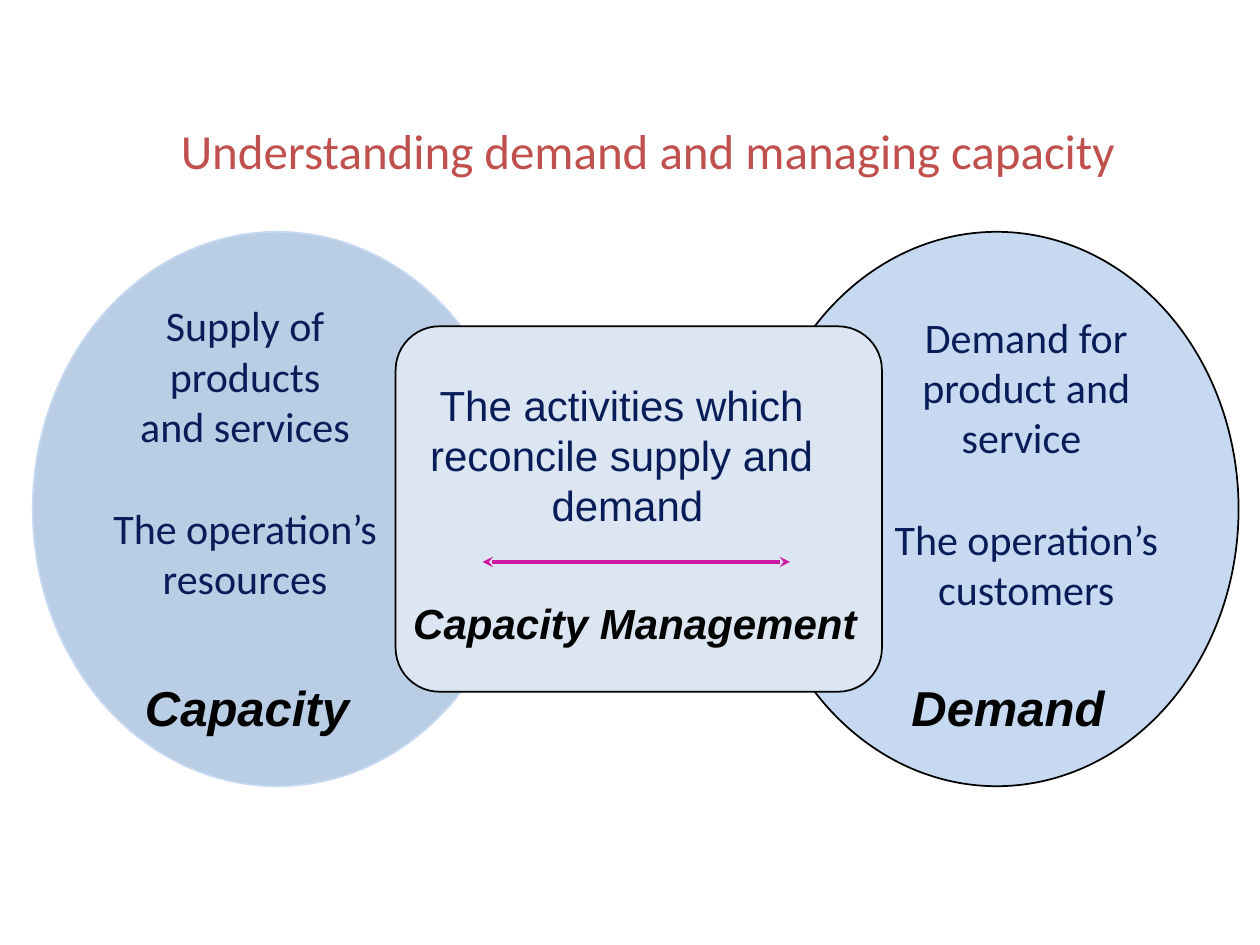
from dataclasses import dataclass

from lxml import etree
from pptx import Presentation
from pptx.dml.color import RGBColor
from pptx.enum import shapes, text
from pptx.oxml import ns
from pptx.util import Inches, Pt

NAVY, BLACK, RED, MAGENTA = "081D58", "000000", "C0504D", "CE1AA0"
PALE_BLUE = "C6D9F1"
BLANK_LINE = 29.3  # height in points of one 24 point Calibri line


@dataclass
class Panel:
    kind: shapes.MSO_SHAPE
    box: tuple[float, float, float, float]
    fill: str
    line: str


@dataclass
class Label:
    box: tuple[float, float, float, float]
    paragraphs: list[str]
    font: dict
    color: str
    gap_before_last: float = 0


BODY = {"name": "Calibri", "size": Pt(24)}
CENTER = {"name": "Arial", "size": Pt(24)}
HEADING = {"name": "Arial", "size": Pt(28), "bold": True, "italic": True}

PANELS = [
    Panel(shapes.MSO_SHAPE.OVAL, (0.26, 1.84, 3.88, 4.4), "B9CDE5", PALE_BLUE),
    Panel(shapes.MSO_SHAPE.OVAL, (5.99, 1.84, 3.84, 4.4), PALE_BLUE, BLACK),
    Panel(shapes.MSO_SHAPE.ROUNDED_RECTANGLE, (3.14, 2.59, 3.86, 2.9), "DCE6F2", BLACK),
]
LABELS = [
    Label((0.74, 2.33, 2.41, 2.9),
          ["Supply of products", "and services", "The operation’s resources"],
          BODY, NAVY, BLANK_LINE),
    Label((6.94, 2.42, 2.41, 2.9),
          ["Demand for product and service ", "The operation’s customers"],
          BODY, NAVY, BLANK_LINE),
    Label((2.83, 2.96, 4.3, 1.3),
          ["The activities which ", "reconcile supply and ", "demand"], CENTER, NAVY),
    Label((0.25, 5.33, 3.42, 0.57), ["Capacity"], HEADING, BLACK),
    Label((6.25, 5.33, 3.5, 0.57), ["Demand"], HEADING, BLACK),
    Label((3.11, 4.69, 3.86, 0.5), ["Capacity Management"],
          HEADING | {"size": Pt(24)}, BLACK),
]


def rgb(value: str) -> RGBColor:
    return RGBColor.from_string(value)


def place(shape, box: tuple) -> None:
    for name, value in zip(("left", "top", "width", "height"), box):
        setattr(shape, name, Inches(value))


def write_label(shape, label: Label) -> None:
    frame = shape.text_frame
    frame.word_wrap = True
    frame.auto_size = text.MSO_AUTO_SIZE.NONE
    frame.vertical_anchor = text.MSO_ANCHOR.TOP
    frame.text = "\n".join(label.paragraphs)
    for paragraph in frame.paragraphs:
        paragraph.alignment = text.PP_ALIGN.CENTER
        font = paragraph.runs[0].font
        for name, value in label.font.items():
            setattr(font, name, value)
        font.color.rgb = rgb(label.color)
    if label.gap_before_last:
        frame.paragraphs[-1].space_before = Pt(label.gap_before_last)


def add_panel(slide, panel: Panel) -> None:
    shape = slide.shapes.add_shape(panel.kind, *map(Inches, panel.box))
    shape.shadow.inherit = False
    shape.fill.solid()
    shape.fill.fore_color.rgb = rgb(panel.fill)
    shape.line.color.rgb = rgb(panel.line)
    shape.line.width = Pt(1)
    if panel.kind == shapes.MSO_SHAPE.ROUNDED_RECTANGLE:
        shape.adjustments[0] = 0.12


def add_label(slide, label: Label) -> None:
    write_label(slide.shapes.add_textbox(*map(Inches, label.box)), label)


def add_double_arrow(slide, left: float, right: float, height: float) -> None:
    arrow = slide.shapes.add_connector(
        shapes.MSO_CONNECTOR.STRAIGHT,
        Inches(left), Inches(height), Inches(right), Inches(height))
    arrow.line.color.rgb = rgb(MAGENTA)
    arrow.line.width = Pt(2)
    line = arrow.line._get_or_add_ln()
    for end in ("a:headEnd", "a:tailEnd"):
        etree.SubElement(line, ns.qn(end), type="stealth")
    etree.SubElement(arrow._element.spPr, ns.qn("a:effectLst"))


def main() -> None:
    presentation = Presentation()
    presentation.slide_width = Inches(10)
    presentation.slide_height = Inches(7.5)
    slide = presentation.slides.add_slide(presentation.slide_layouts[5])

    # Title
    title = Label((0.28, 0.91, 9.72, 1.01),
                  ["Understanding demand and managing capacity"],
                  {"name": "Calibri", "size": Pt(28)}, RED)
    place(slide.shapes.title, title.box)
    write_label(slide.shapes.title, title)

    # Capacity and demand circles, joined by the management panel
    for panel in PANELS:
        add_panel(slide, panel)
    for label in LABELS:
        add_label(slide, label)
    add_double_arrow(slide, 3.83, 6.27, 4.46)

    presentation.save("out.pptx")


if __name__ == "__main__":
    main()
